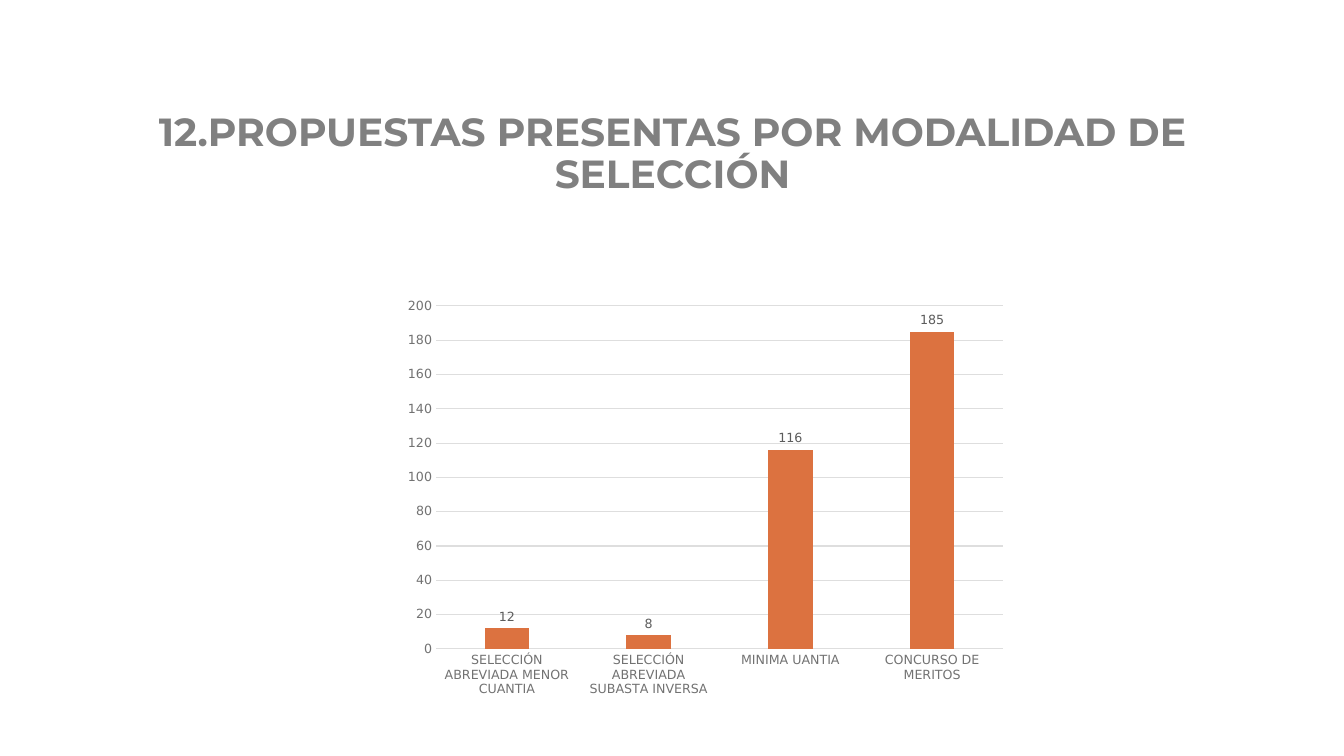
from lxml import etree
from pptx import Presentation, util as u
from pptx.chart.data import CategoryChartData
from pptx.dml.color import RGBColor
from pptx.enum import chart as c, text
from pptx.oxml.ns import qn

SLIDE = (1344, 756)
TITLE = "12.PROPUESTAS PRESENTAS POR MODALIDAD DE SELECCIÓN"
TITLE_BOX = (93, 100, 1159, 102)
CHART_BOX = (396, 290, 620, 415)
PLOT_BOX = (436, 306, 567, 343)
PROPOSALS = {
    "SELECCIÓN ABREVIADA MENOR CUANTIA": 12,
    "SELECCIÓN ABREVIADA SUBASTA INVERSA": 8,
    "MINIMA UANTIA": 116,
    "CONCURSO DE MERITOS": 185,
}
GRAY, AXIS_TEXT, LABEL_TEXT = "808080", "727272", "5C5C5C"
GRID, BAR = "DEDEDE", "DC7240"


def px(value):
    return round(value * 914400 / 100.8)


def color(value):
    return RGBColor.from_string(value)


def set_font(font, name, size, value, bold=False):
    font.name = name
    font.size = u.Pt(size)
    font.bold = bold
    font.color.rgb = color(value)


def set_line(line):
    line.color.rgb = color(GRID)
    line.width = u.Pt(0.75)


def add_title(slide):
    frame = slide.shapes.add_textbox(*map(px, TITLE_BOX)).text_frame
    frame.word_wrap = True
    frame.vertical_anchor = text.MSO_ANCHOR.BOTTOM
    paragraph = frame.paragraphs[0]
    paragraph.text = TITLE
    paragraph.alignment = text.PP_ALIGN.CENTER
    paragraph.line_spacing = 0.9
    set_font(paragraph.runs[0].font, "Montserrat", 28, GRAY, True)


def place_plot(chart):
    plot_area = chart._chartSpace.chart.plotArea
    for old in plot_area.findall(qn("c:layout")):
        plot_area.remove(old)
    layout = etree.Element(qn("c:layout"))
    manual = etree.SubElement(layout, qn("c:manualLayout"))
    left, top, width, height = CHART_BOX
    x, y, w, h = PLOT_BOX
    settings = {
        "layoutTarget": "inner", "xMode": "edge", "yMode": "edge",
        "x": (x - left) / width, "y": (y - top) / height,
        "w": w / width, "h": h / height,
    }
    for name, value in settings.items():
        etree.SubElement(manual, qn("c:" + name)).set("val", str(value))
    plot_area.insert(0, layout)


def add_proposals_chart(slide):
    data = CategoryChartData()
    data.categories = list(PROPOSALS)
    data.add_series("Series 1", list(PROPOSALS.values()))
    chart = slide.shapes.add_chart(
        c.XL_CHART_TYPE.COLUMN_CLUSTERED, *map(px, CHART_BOX), data).chart
    chart.has_legend = False
    chart.has_title = False
    set_font(chart.font, "DejaVu Sans", 10, "262626")

    category_axis, value_axis = chart.category_axis, chart.value_axis
    for axis in (category_axis, value_axis):
        axis.major_tick_mark = axis.minor_tick_mark = c.XL_TICK_MARK.NONE
        set_font(axis.tick_labels.font, "DejaVu Sans", 9, AXIS_TEXT)
    set_line(category_axis.format.line)
    value_axis.format.line.fill.background()
    set_line(value_axis.major_gridlines.format.line)
    value_axis.minimum_scale = 0
    value_axis.maximum_scale = 200
    value_axis.major_unit = 20

    plot = chart.plots[0]
    plot.gap_width = 219
    plot.overlap = -27
    plot.vary_by_categories = False
    series = plot.series[0]
    series.format.fill.solid()
    series.format.fill.fore_color.rgb = color(BAR)
    labels = series.data_labels
    labels.show_value = True
    labels.position = c.XL_LABEL_POSITION.OUTSIDE_END
    set_font(labels.font, "DejaVu Sans", 9, LABEL_TEXT)
    place_plot(chart)


def main():
    presentation = Presentation()
    presentation.slide_width, presentation.slide_height = map(px, SLIDE)
    slide = presentation.slides.add_slide(presentation.slide_layouts[6])
    add_title(slide)
    add_proposals_chart(slide)
    presentation.save("out.pptx")


if __name__ == "__main__":
    main()
